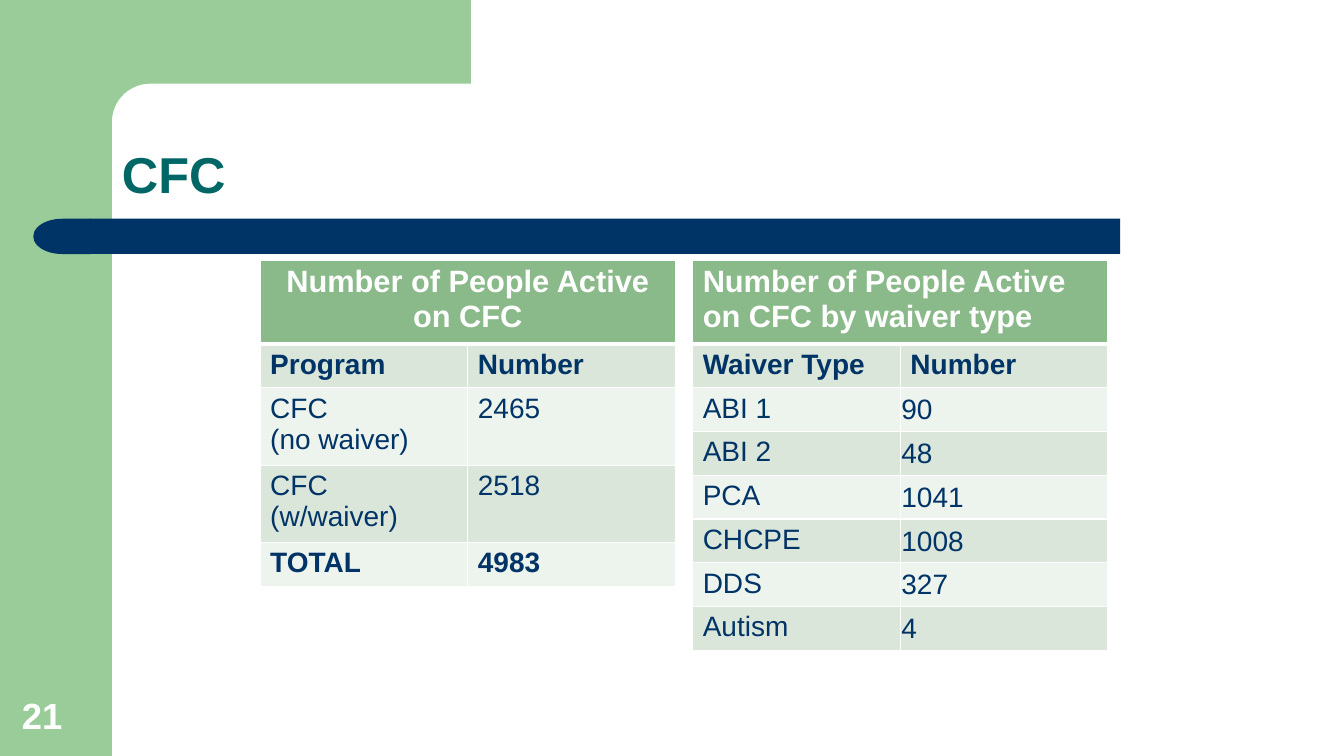
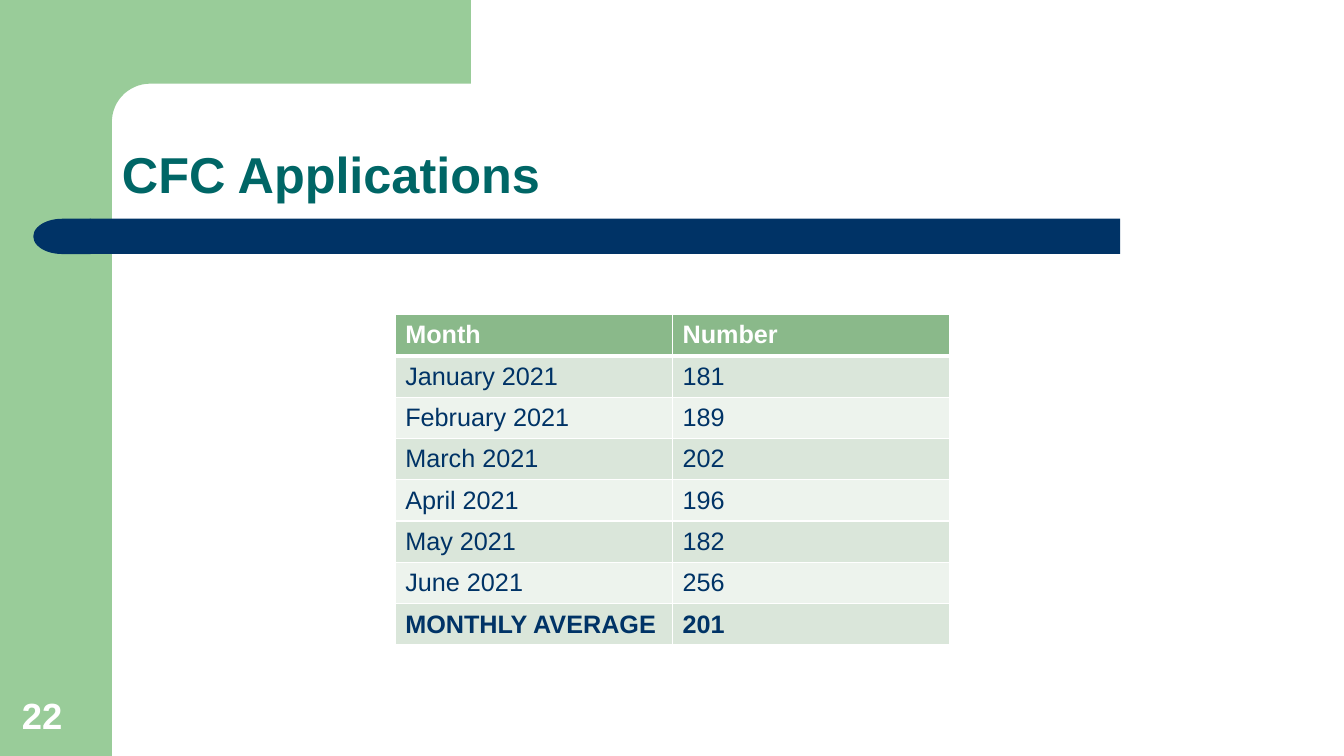
import math

from lxml import etree
from pptx import Presentation
from pptx import util as u
from pptx.dml.color import RGBColor
from pptx.enum import shapes, text
from pptx.oxml.ns import qn

COLORS = {
    "band": "99CC99",
    "navy": "003366",
    "title": "006666",
    "white": "FFFFFF",
    "header": "8AB98A",
    "odd_row": "DAE6DA",
    "even_row": "EDF3ED",
}
FONT = "Arial"
ROW_HEIGHT = 0.41
TITLE_ONLY = 5


def rgb(name):
    return RGBColor.from_string(COLORS[name])


def write_text(frame, content, size=20, color="navy", bold=False,
               align=text.PP_ALIGN.LEFT, spacing=None):
    frame.word_wrap = True
    for index, line in enumerate(content.split("\n")):
        paragraph = frame.add_paragraph() if index else frame.paragraphs[0]
        paragraph.alignment = align
        if spacing:
            paragraph.line_spacing = spacing
        run = paragraph.add_run()
        run.text = line
        run.font.name = FONT
        run.font.size = u.Pt(size)
        run.font.bold = bold
        run.font.color.rgb = rgb(color)


def paint(shape, color):
    shape.shadow.inherit = False
    shape.fill.solid()
    shape.fill.fore_color.rgb = rgb(color)
    shape.line.fill.background()
    return shape


def add_block(slide, kind, box, color):
    return paint(slide.shapes.add_shape(kind, *map(u.Inches, box)), color)


def add_corner(slide, left, inner, right, bottom, radius):
    arc = [
        (inner + radius - radius * math.sin(angle),
         bottom + radius - radius * math.cos(angle))
        for angle in (math.radians(step) for step in range(0, 91, 6))
    ]
    end = bottom + 0.45
    points = [(right, bottom), *arc, (inner, end), (left, end), (left, 0)]
    builder = slide.shapes.build_freeform(u.Inches(right), 0)
    builder.add_line_segments([(u.Inches(x), u.Inches(y)) for x, y in points])
    paint(builder.convert_to_shape(), "band")


def add_frame(slide):
    preset = shapes.MSO_SHAPE
    add_block(slide, preset.RECTANGLE, (0, 0, 1.11, 7.5), "band")
    add_corner(slide, left=0.67, inner=1.11, right=4.67, bottom=0.83, radius=0.38)
    add_block(slide, preset.RECTANGLE, (0.89, 2.17, 10.22, 0.35), "navy")
    cap = add_block(slide, preset.FLOWCHART_DELAY, (0.33, 2.17, 0.57, 0.35), "navy")
    cap.rotation = 180


def add_title(slide, content):
    title = slide.shapes.title
    title.left, title.top, title.width, title.height = map(
        u.Inches, (1.11, 0.83, 11.56, 1.25))
    title.text_frame.auto_size = text.MSO_AUTO_SIZE.NONE
    title.text_frame.vertical_anchor = text.MSO_ANCHOR.BOTTOM
    write_text(title.text_frame, content, size=36, color="title", bold=True,
               spacing=0.9)


def add_number(slide, number):
    box = slide.shapes.add_textbox(*map(u.Inches, (0.12, 6.83, 0.86, 0.53)))
    box.text_frame.vertical_anchor = text.MSO_ANCHOR.BOTTOM
    write_text(box.text_frame, str(number), size=26, color="white", bold=True)


def add_slide(presentation, title, number):
    slide = presentation.slides.add_slide(presentation.slide_layouts[TITLE_ONLY])
    add_frame(slide)
    add_title(slide, title)
    add_number(slide, number)
    return slide


def set_borders(cell, top, bottom):
    properties = cell._tc.get_or_add_tcPr()
    for side, width in (("L", 1), ("R", 1), ("T", top), ("B", bottom)):
        line = etree.SubElement(properties, qn(f"a:ln{side}"), w=str(u.Pt(width)))
        fill = etree.SubElement(line, qn("a:solidFill"))
        etree.SubElement(fill, qn("a:srgbClr"), val=COLORS["white"])


def row_color(index):
    if index == 0:
        return "header"
    return "odd_row" if index % 2 else "even_row"


def add_table(slide, left, top, column_width, rows, heights, bold_rows,
              size=20, header_size=22, header_align=text.PP_ALIGN.LEFT,
              tight_values_from=None):
    columns = max(len(row) for row in rows)
    frame = slide.shapes.add_table(
        len(rows), columns, u.Inches(left), u.Inches(top),
        u.Inches(column_width * columns), u.Inches(sum(heights)))
    table = frame.table
    table.first_row = table.horz_banding = False
    for column in table.columns:
        column.width = u.Inches(column_width)
    for index, (values, height) in enumerate(zip(rows, heights)):
        table.rows[index].height = u.Inches(height)
        for position in range(columns):
            cell = table.cell(index, position)
            set_borders(cell, top=3 if index == 1 else 1,
                        bottom=1 if index else 3)
            cell.fill.solid()
            cell.fill.fore_color.rgb = rgb(row_color(index))
        if len(values) < columns:
            table.cell(index, 0).merge(table.cell(index, columns - 1))
        for position, value in enumerate(values):
            cell = table.cell(index, position)
            if tight_values_from and position and index >= tight_values_from:
                cell.margin_left = cell.margin_right = u.Inches(0.01)
                cell.margin_top, cell.margin_bottom = u.Inches(0.01), 0
                cell.vertical_anchor = text.MSO_ANCHOR.MIDDLE
            elif len(rows[0]) == columns:
                cell.vertical_anchor = text.MSO_ANCHOR.MIDDLE
            if index:
                write_text(cell.text_frame, value, size=size,
                           bold=index in bold_rows)
            else:
                write_text(cell.text_frame, value, size=header_size,
                           color="white", bold=True, align=header_align)


def build_active_slide(presentation):
    slide = add_slide(presentation, "CFC", 21)
    programs = [
        ("Number of People Active on CFC",),
        ("Program", "Number"),
        ("CFC\n(no waiver)", "2465"),
        ("CFC (w/waiver)", "2518"),
        ("TOTAL", "4983"),
    ]
    add_table(slide, 2.58, 2.58, 2.06, programs,
              [0.77, ROW_HEIGHT, 0.72, 0.72, ROW_HEIGHT], bold_rows=(1, 4),
              header_align=text.PP_ALIGN.CENTER)
    waivers = [
        ("Number of People Active on CFC by waiver type",),
        ("Waiver Type", "Number"),
        ("ABI 1", "90"),
        ("ABI 2", "48"),
        ("PCA", "1041"),
        ("CHCPE", "1008"),
        ("DDS", "327"),
        ("Autism", "4"),
    ]
    add_table(slide, 6.87, 2.58, 2.06, waivers, [0.77] + [ROW_HEIGHT] * 7,
              bold_rows=(1,), tight_values_from=2)


def build_applications_slide(presentation):
    slide = add_slide(presentation, "CFC Applications", 22)
    months = [
        ("Month", "Number"),
        ("January 2021", "181"),
        ("February 2021", "189"),
        ("March 2021", "202"),
        ("April 2021", "196"),
        ("May 2021", "182"),
        ("June 2021", "256"),
        ("MONTHLY AVERAGE", "201"),
    ]
    add_table(slide, 3.92, 3.12, 2.75, months, [ROW_HEIGHT] * len(months),
              bold_rows=(7,), size=18, header_size=18)


def main():
    presentation = Presentation()
    presentation.slide_width = u.Inches(13.33)
    presentation.slide_height = u.Inches(7.5)
    build_active_slide(presentation)
    build_applications_slide(presentation)
    presentation.save("out.pptx")


if __name__ == "__main__":
    main()
